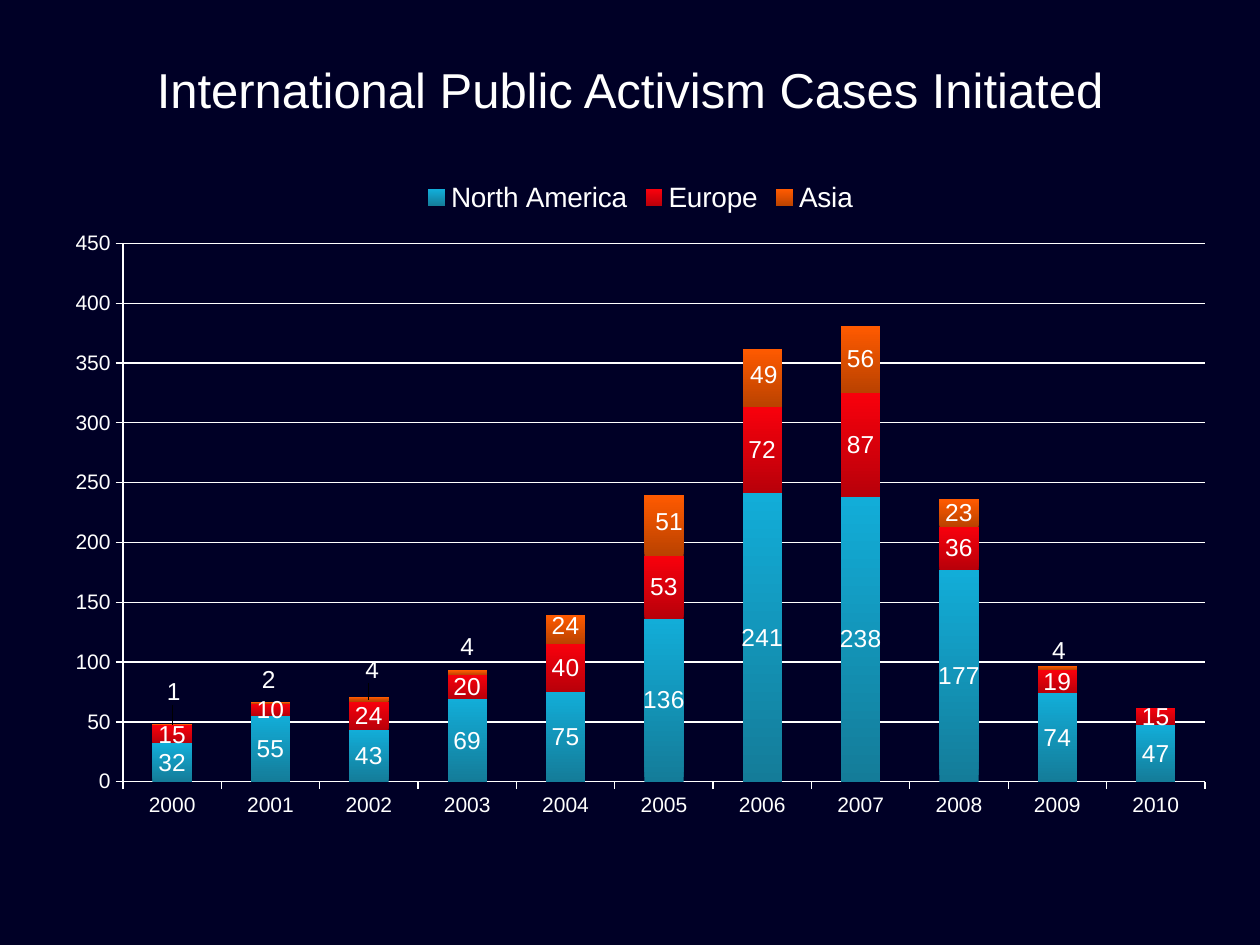
from pptx import Presentation
from pptx.chart.data import CategoryChartData
from pptx.dml.color import RGBColor
from pptx.enum.chart import XL_CHART_TYPE as ChartType
from pptx.enum.chart import XL_LABEL_POSITION as LabelPosition
from pptx.enum.chart import XL_LEGEND_POSITION as LegendPosition
from pptx.enum.chart import XL_TICK_MARK as TickMark
from pptx.enum.text import MSO_ANCHOR as Anchor
from pptx.enum.text import PP_ALIGN as Align
from pptx.oxml import parse_xml
from pptx.oxml.ns import nsdecls, qn
from pptx.util import Pt

NAVY = RGBColor(0x00, 0x00, 0x26)
WHITE = RGBColor(0xFF, 0xFF, 0xFF)
TEAL_DARK, TEAL = RGBColor(0x14, 0x7C, 0x99), RGBColor(0x12, 0xAD, 0xD8)
RED_DARK, RED = RGBColor(0xB8, 0x00, 0x0A), RGBColor(0xF8, 0x00, 0x0C)
ORANGE_DARK, ORANGE = RGBColor(0xBA, 0x42, 0x00), RGBColor(0xFF, 0x5A, 0x00)

YEARS = [str(year) for year in range(2000, 2011)]
REGIONS = {
    "North America": ([32, 55, 43, 69, 75, 136, 241, 238, 177, 74, 47], TEAL_DARK, TEAL),
    "Europe": ([15, 10, 24, 20, 40, 53, 72, 87, 36, 19, 15], RED_DARK, RED),
    "Asia": ([1, 2, 4, 4, 24, 51, 49, 56, 23, 4, None], ORANGE_DARK, ORANGE),
}
ASIA_LABEL_SHIFTS = {
    0: (1, -19), 1: (-1, -13), 2: (2, -17), 3: (0, -15),
    4: (0, -2), 5: (3, -2), 6: (1, -2), 9: (1, -10),
}


def set_font(font, size):
    for name, value in {"name": "Arial", "size": Pt(size), "bold": False}.items():
        setattr(font, name, value)
    font.color.rgb = WHITE


def make_layout(**values):
    items = "".join(f'<c:{name} val="{value}"/>' for name, value in values.items())
    return parse_xml(
        f'<c:layout {nsdecls("c")}><c:manualLayout>{items}</c:manualLayout></c:layout>'
    )


def place_title(page, left, top, width, height):
    title = page.shapes.title
    box = {"left": left, "top": top, "width": width, "height": height}
    for name, value in box.items():
        setattr(title, name, Pt(value))
    frame = title.text_frame
    frame.text = "International Public Activism Cases Initiated"
    frame.vertical_anchor = Anchor.MIDDLE
    para = frame.paragraphs[0]
    para.alignment = Align.CENTER
    set_font(para.runs[0].font, 28)


def format_line(line):
    line.color.rgb = WHITE
    line.width = Pt(0.75)


def style_axes(chart):
    for axis in (chart.category_axis, chart.value_axis):
        axis.major_tick_mark = TickMark.OUTSIDE
        axis.minor_tick_mark = TickMark.NONE
        set_font(axis.tick_labels.font, 12)
        format_line(axis.format.line)
    scale = {"minimum_scale": 0, "maximum_scale": 450, "major_unit": 50}
    for name, value in scale.items():
        setattr(chart.value_axis, name, value)
    format_line(chart.value_axis.major_gridlines.format.line)


def style_series(series, dark, light):
    fill = series.format.fill
    fill.gradient()
    fill.gradient_angle = 90
    for stop, color in zip(fill.gradient_stops, (dark, light)):
        stop.color.rgb = color
    labels = series.data_labels
    labels.show_value = True
    labels.position = LabelPosition.CENTER
    set_font(labels.font, 14)


def shift_labels(series, shifts, width, height):
    for index, (right, down) in shifts.items():
        label = series.points[index].data_label
        set_font(label.font, 14)
        label.position = LabelPosition.CENTER
    for node in series.data_labels._element.findall(qn("c:dLbl")):
        number = node.find(qn("c:idx"))
        right, down = shifts[int(number.get("val"))]
        number.addnext(make_layout(x=right / width, y=down / height))


def place_chart(page, left, top, width, height):
    data = CategoryChartData()
    data.categories = YEARS
    for name, (values, _, _) in REGIONS.items():
        data.add_series(name, values)
    box = [Pt(length) for length in (left, top, width, height)]
    chart = page.shapes.add_chart(ChartType.COLUMN_STACKED, *box, data).chart
    set_font(chart.font, 18)
    chart.has_title = False
    chart.has_legend = True
    chart.legend.position = LegendPosition.TOP
    chart.legend.include_in_layout = False
    set_font(chart.legend.font, 16)
    style_axes(chart)

    plot = chart.plots[0]
    for name, value in {"gap_width": 150, "overlap": 100, "vary_by_categories": False}.items():
        setattr(plot, name, value)
    for series in plot.series:
        _, dark, light = REGIONS[series.name]
        style_series(series, dark, light)
    shift_labels(plot.series[2], ASIA_LABEL_SHIFTS, width, height)

    area = chart._chartSpace.chart.plotArea
    for old in area.findall(qn("c:layout")):
        area.remove(old)
    area.insert(0, make_layout(
        layoutTarget="inner", xMode="edge", yMode="edge", x=0.06, y=0.114, w=0.92, h=0.814
    ))


def main():
    deck = Presentation()
    deck.slide_width, deck.slide_height = Pt(720), Pt(540)
    page = deck.slides.add_slide(deck.slide_layouts[5])
    page.background.fill.solid()
    page.background.fill.fore_color.rgb = NAVY
    place_title(page, 0, 6, 720, 90)
    place_chart(page, 30, 96, 672, 378)
    deck.save("out.pptx")


if __name__ == "__main__":
    main()
